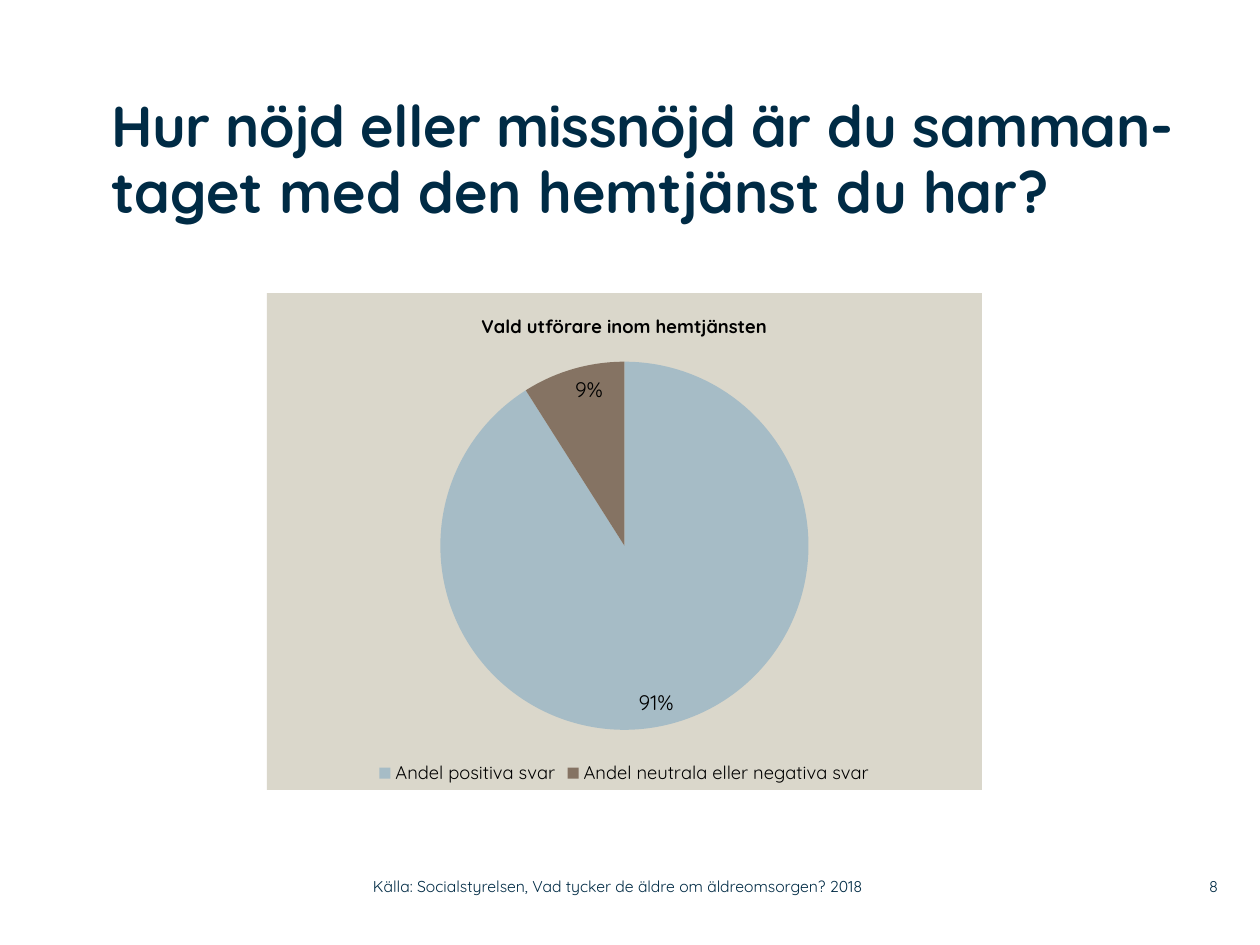
from dataclasses import dataclass

from pptx import Presentation
from pptx.chart.data import CategoryChartData
from pptx.dml.color import RGBColor
from pptx.enum.chart import XL_CHART_TYPE, XL_LABEL_POSITION, XL_LEGEND_POSITION
from pptx.enum.text import MSO_ANCHOR, PP_ALIGN
from pptx.oxml import parse_xml
from pptx.oxml.ns import nsdecls
from pptx.util import Emu, Pt

# Content
TITLE_LINES = [
    ("Hur nöjd eller missnöjd är du samman-", -30),  # spacing in 1/100 pt
    ("taget med den hemtjänst du har?", 0),
]
CHART_TITLE = "Vald utförare inom hemtjänsten"
ANSWERS = [
    ("Andel positiva svar", 91, "A6BCC6"),
    ("Andel neutrala eller negativa svar", 9, "857363"),
]
FOOTER = [
    ("Källa: Socialstyrelsen, Vad tycker de äldre om äldreomsorgen? 2018",
     (373, 868, 558, 37), PP_ALIGN.LEFT),
    ("8", (1159, 868, 59, 37), PP_ALIGN.RIGHT),
]

# Layout in px
SLIDE = (1260, 945)
TITLE_BOX = (111, 95, 1126, 179)
CHART_BOX = (267, 293, 715, 497)
EMU_PER_PX = 914400 / 126


@dataclass(frozen=True)
class Theme:
    font: str = "Quicksand"
    ink: str = "002B45"
    chart_text: str = "000000"
    chart_fill: str = "DAD7CB"
    title_size: float = 33
    chart_label_size: float = 12
    chart_caption_size: float = 10.5
    footer_size: float = 9


THEME = Theme()


def px(*lengths):
    return [Emu(round(length * EMU_PER_PX)) for length in lengths]


def style(font, size, color, bold=False):
    font.name = THEME.font
    font.size = Pt(size)
    font.bold = bold
    font.color.rgb = RGBColor.from_string(color)


def set_frame(frame, anchor):
    frame.margin_left = frame.margin_top = frame.margin_right = frame.margin_bottom = 0
    frame.word_wrap = True
    frame.vertical_anchor = anchor


def add_title(slide):
    title = slide.shapes.title
    title.left, title.top, title.width, title.height = px(*TITLE_BOX)
    set_frame(title.text_frame, MSO_ANCHOR.TOP)
    heading = title.text_frame.paragraphs[0]
    heading.alignment = PP_ALIGN.LEFT
    heading.line_spacing = 0.95
    for index, (line, spacing) in enumerate(TITLE_LINES):
        if index:
            heading.add_line_break()
        run = heading.add_run()
        run.text = line
        style(run.font, THEME.title_size, THEME.ink, bold=True)
        run.font._element.set("spc", str(spacing))


def add_footer(slide):
    for text, box, alignment in FOOTER:
        frame = slide.shapes.add_textbox(*px(*box)).text_frame
        set_frame(frame, MSO_ANCHOR.MIDDLE)
        frame.paragraphs[0].alignment = alignment
        run = frame.paragraphs[0].add_run()
        run.text = text
        style(run.font, THEME.footer_size, THEME.ink)


def add_answer_chart(slide):
    answers = CategoryChartData()
    answers.categories = [name for name, _, _ in ANSWERS]
    answers.add_series("Series 1", [share for _, share, _ in ANSWERS])
    chart = slide.shapes.add_chart(XL_CHART_TYPE.PIE, *px(*CHART_BOX), answers).chart
    style(chart.font, 18, THEME.chart_text)

    # Background behind the pie
    chart.font._element.getparent().getparent().getparent().addprevious(parse_xml(
        f'<c:spPr {nsdecls("c", "a")}><a:solidFill><a:srgbClr val="{THEME.chart_fill}"/>'
        "</a:solidFill><a:ln><a:noFill/></a:ln></c:spPr>"))

    # Caption and legend
    caption = chart.chart_title.text_frame.paragraphs[0].add_run()
    caption.text = CHART_TITLE
    style(caption.font, THEME.chart_caption_size, THEME.chart_text, bold=True)
    chart.chart_title.include_in_layout = False
    chart.has_legend = True
    chart.legend.position = XL_LEGEND_POSITION.BOTTOM
    chart.legend.include_in_layout = False
    style(chart.legend.font, THEME.chart_caption_size, THEME.chart_text)

    # Slices and their labels
    pie = chart.plots[0]
    pie.vary_by_categories = True
    for index, (_, _, color) in enumerate(ANSWERS):
        slice_fill = pie.series[0].points[index].format.fill
        slice_fill.solid()
        slice_fill.fore_color.rgb = RGBColor.from_string(color)
    labels = pie.series[0].data_labels
    labels.show_percentage = True
    labels.show_value = False
    labels.number_format = "0%"
    labels.number_format_is_linked = False
    labels.position = XL_LABEL_POSITION.INSIDE_END
    style(labels.font, THEME.chart_label_size, THEME.chart_text)


def main():
    deck = Presentation()
    deck.slide_width, deck.slide_height = px(*SLIDE)
    slide = deck.slides.add_slide(deck.slide_layouts[5])
    add_footer(slide)
    add_title(slide)
    add_answer_chart(slide)
    deck.save("out.pptx")


if __name__ == "__main__":
    main()
